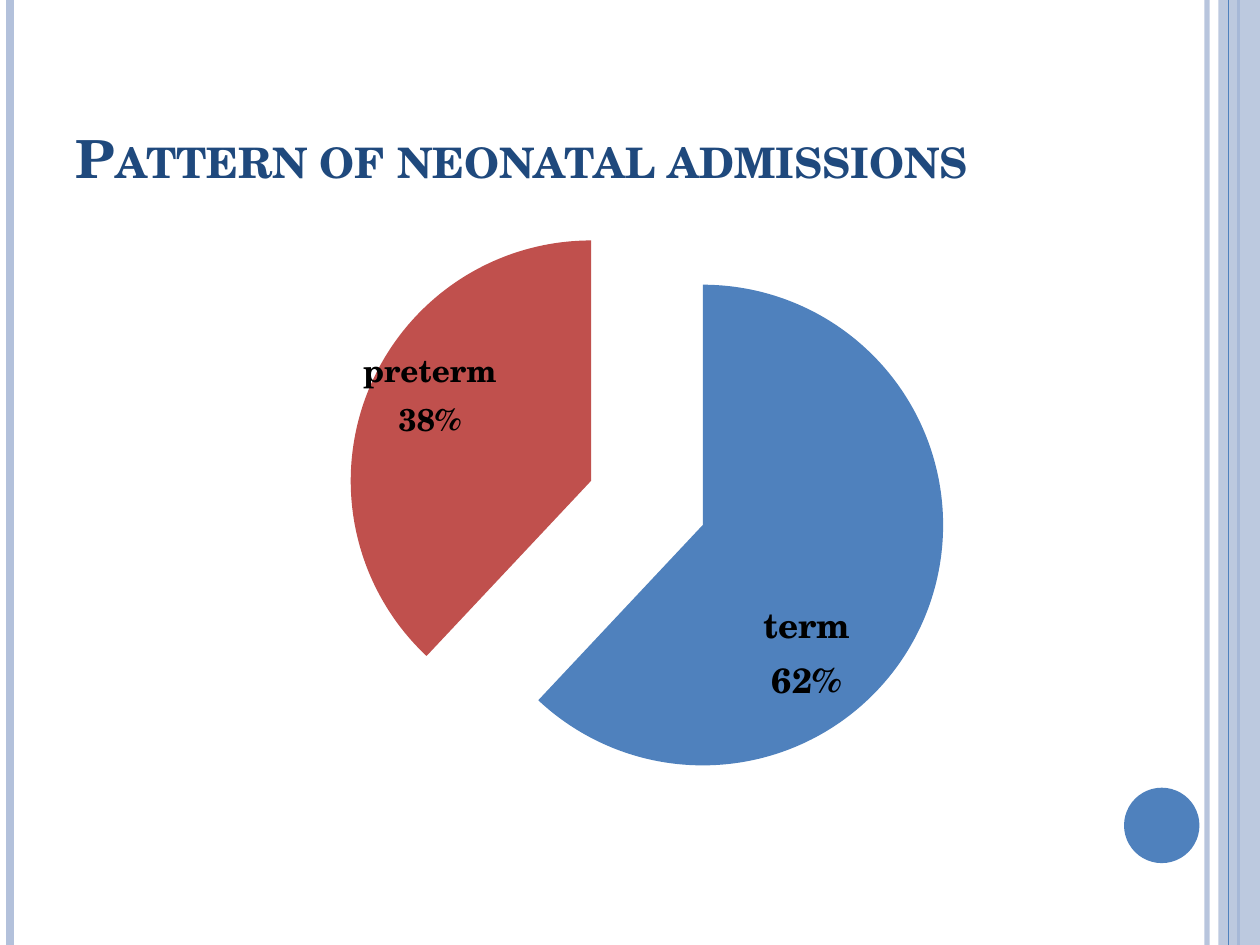
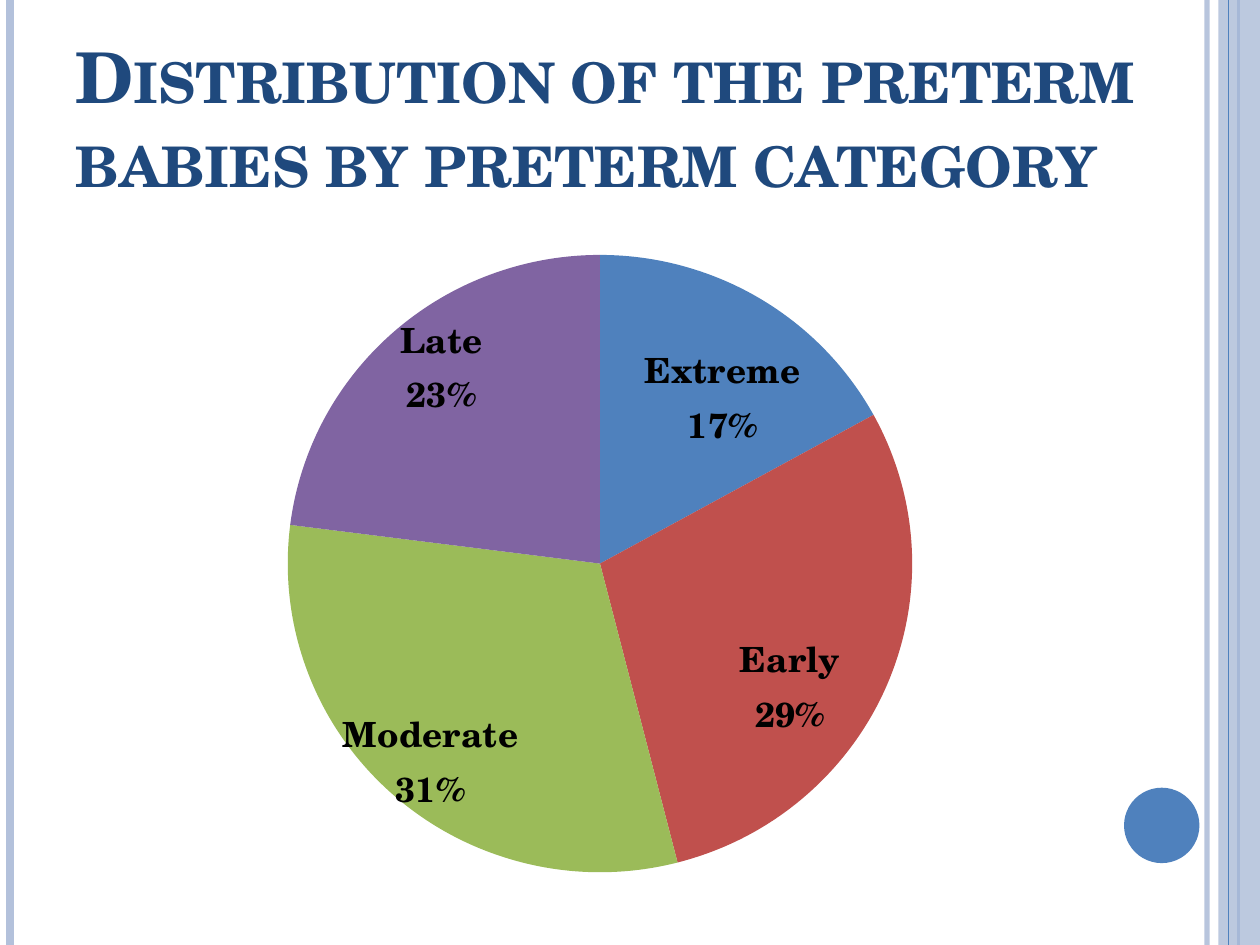
from dataclasses import dataclass

from lxml import etree
from pptx import Presentation
from pptx import util as u
from pptx.chart import data as chart_data
from pptx.dml import color
from pptx.enum import chart as chart_enum
from pptx.enum import shapes, text
from pptx.oxml import ns

FONT = "TeX Gyre Schola"
COLOURS = {
    "title": "1F497D", "label": "000000", "pale": "B3C1DB",
    "blue": "4F81BD", "red": "C0504D", "green": "9BBB59", "purple": "8064A2",
}
SLICE_COLOURS = ("blue", "red", "green", "purple")
WIDTH, HEIGHT = 25.4, 19.05


@dataclass(frozen=True)
class Box:
    left: float
    top: float
    width: float
    height: float

    def cm(self) -> tuple:
        return tuple(u.Cm(n) for n in (self.left, self.top, self.width, self.height))


@dataclass(frozen=True)
class Stripe:
    x: float
    weight: float
    colour: str
    opacity: int = 100


@dataclass(frozen=True)
class Slice:
    category: str
    value: int
    label_shift: tuple  # share of the chart's width and height
    label_size: int = 20


@dataclass(frozen=True)
class PieSlide:
    title: str
    title_size: int
    title_box: Box
    title_fit: text.MSO_AUTO_SIZE
    chart_box: Box
    plot: tuple  # x, y, w, h as shares of the chart
    slices: tuple
    explosion: int = 0


STRIPES_BEHIND = (
    Stripe(24.33, 3, "pale", 93),
    Stripe(0.2, 4.5, "pale"),
    Stripe(24.97, 1.5, "blue"),
)
STRIPE_IN_FRONT = Stripe(24.77, 0.75, "blue")
SIDE_BAND = Box(24.56, 0, 0.84, HEIGHT)
DISC = Box(22.66, 15.88, 1.52, 1.52)

PIE_SLIDES = (
    PieSlide(
        "Pattern of neonatal admissions", 30,
        Box(1.27, 0.76, 20.75, 3.18), text.MSO_AUTO_SIZE.NONE,
        Box(1.27, 3.53, 22.86, 13.49), (0.25, 0.04, 0.53, 0.9),
        (Slice("term", 62, (-0.15, -0.03)),
         Slice("preterm", 38, (0.12, 0.08), 18)),
        explosion=25,
    ),
    PieSlide(
        "Distribution of the preterm babies by preterm category", 40,
        Box(1.27, 0.51, 22.86, 3.68), text.MSO_AUTO_SIZE.SHAPE_TO_FIT_TEXT,
        Box(0.3, 3.53, 23.83, 14.81), (0.23, 0.11, 0.53, 0.85),
        (Slice("Extreme", 17, (-0.1, 0.22)),
         Slice("Early", 29, (-0.13, -0.08)),
         Slice("Moderate", 31, (0.11, -0.13)),
         Slice("Late", 23, (0.08, 0.13))),
    ),
)


def rgb(name: str) -> color.RGBColor:
    return color.RGBColor.from_string(COLOURS[name])


def style_font(font, size: int, colour: str) -> None:
    font.name, font.size, font.bold = FONT, u.Pt(size), True
    font.color.rgb = rgb(colour)


def set_opacity(shape, percent: int) -> None:
    for tint in shape.element.spPr.iter(ns.qn("a:srgbClr")):
        etree.SubElement(tint, ns.qn("a:alpha"), val=str(percent * 1000))


# Shared frame of the slides
def add_stripe(slide, stripe: Stripe) -> None:
    x = u.Cm(stripe.x)
    line = slide.shapes.add_connector(
        shapes.MSO_CONNECTOR.STRAIGHT, x, u.Cm(0), x, u.Cm(HEIGHT))
    line.line.color.rgb = rgb(stripe.colour)
    line.line.width = u.Pt(stripe.weight)
    if stripe.opacity < 100:
        set_opacity(line, stripe.opacity)
    etree.SubElement(line.element.spPr, ns.qn("a:effectLst"))


def add_filled(slide, kind: shapes.MSO_SHAPE, box: Box, colour: str):
    shape = slide.shapes.add_shape(kind, *box.cm())
    shape.shadow.inherit = False
    shape.fill.solid()
    shape.fill.fore_color.rgb = rgb(colour)
    shape.line.fill.background()
    return shape


def add_frame(slide) -> None:
    for stripe in STRIPES_BEHIND:
        add_stripe(slide, stripe)
    band = add_filled(slide, shapes.MSO_SHAPE.RECTANGLE, SIDE_BAND, "pale")
    set_opacity(band, 87)
    add_stripe(slide, STRIPE_IN_FRONT)
    add_filled(slide, shapes.MSO_SHAPE.OVAL, DISC, "blue")


# Title in small capitals
def fill_title(slide, content: PieSlide) -> None:
    title = slide.shapes.title
    title.left, title.top, title.width, title.height = content.title_box.cm()
    frame = title.text_frame
    frame.word_wrap = True
    frame.auto_size = content.title_fit
    frame.vertical_anchor = text.MSO_ANCHOR.BOTTOM
    paragraph = frame.paragraphs[0]
    paragraph.alignment = text.PP_ALIGN.LEFT
    run = paragraph.add_run()
    run.text = content.title
    style_font(run.font, content.title_size, "title")
    run.font.element.set("cap", "small") if hasattr(run.font, "element") else \
        run._r.get_or_add_rPr().set("cap", "small")


# Pie chart
def make_layout(**values):
    layout = etree.Element(ns.qn("c:layout"))
    manual = etree.SubElement(layout, ns.qn("c:manualLayout"))
    for tag, value in values.items():
        etree.SubElement(manual, ns.qn(f"c:{tag}"), val=str(value))
    return layout


def set_plot_layout(chart, plot: tuple) -> None:
    area = chart.element.find(".//" + ns.qn("c:plotArea"))
    for old in area.findall(ns.qn("c:layout")):
        area.remove(old)
    x, y, w, h = plot
    area.insert(0, make_layout(layoutTarget="inner", xMode="edge", yMode="edge",
                               x=x, y=y, w=w, h=h))


def format_label(point, piece: Slice) -> None:
    label = point.data_label
    style_font(label.font, piece.label_size, "label")
    label.position = chart_enum.XL_LABEL_POSITION.BEST_FIT


def finish_labels(series, slices: tuple) -> None:
    """Show category over percentage and shift each label."""
    labels = series.data_labels
    labels.show_value = False
    labels.show_category_name = labels.show_percentage = True
    for node, piece in zip(series._element.iter(ns.qn("c:dLbl")), slices):
        x, y = piece.label_shift
        node.find(ns.qn("c:idx")).addnext(make_layout(x=x, y=y))
        for tag, shown in (("showVal", 0), ("showCatName", 1), ("showPercent", 1)):
            node.find(ns.qn(f"c:{tag}")).set("val", str(shown))
        separator = etree.Element(ns.qn("c:separator"))
        separator.text = "\n"
        node.find(ns.qn("c:showBubbleSize")).addnext(separator)


def add_pie(slide, content: PieSlide) -> None:
    data = chart_data.CategoryChartData()
    data.categories = [piece.category for piece in content.slices]
    data.add_series("Series 1", [piece.value for piece in content.slices])
    chart = slide.shapes.add_chart(
        chart_enum.XL_CHART_TYPE.PIE, *content.chart_box.cm(), data).chart
    chart.has_legend = chart.has_title = False
    chart.font.name, chart.font.size = FONT, u.Pt(10)
    chart.font.color.rgb = rgb("label")
    set_plot_layout(chart, content.plot)

    pie = chart.plots[0]
    pie.vary_by_categories = True
    series = pie.series[0]
    if content.explosion:
        explosion = etree.Element(ns.qn("c:explosion"), val=str(content.explosion))
        series._element.find(ns.qn("c:tx")).addnext(explosion)
    for index, (piece, colour) in enumerate(zip(content.slices, SLICE_COLOURS)):
        point = series.points[index]
        point.format.fill.solid()
        point.format.fill.fore_color.rgb = rgb(colour)
        point.format.line.fill.background()
        format_label(point, piece)
    finish_labels(series, content.slices)


def main() -> None:
    deck = Presentation()
    deck.slide_width, deck.slide_height = u.Cm(WIDTH), u.Cm(HEIGHT)
    for content in PIE_SLIDES:
        slide = deck.slides.add_slide(deck.slide_layouts[5])
        add_frame(slide)
        fill_title(slide, content)
        add_pie(slide, content)
    deck.save("out.pptx")


if __name__ == "__main__":
    main()
